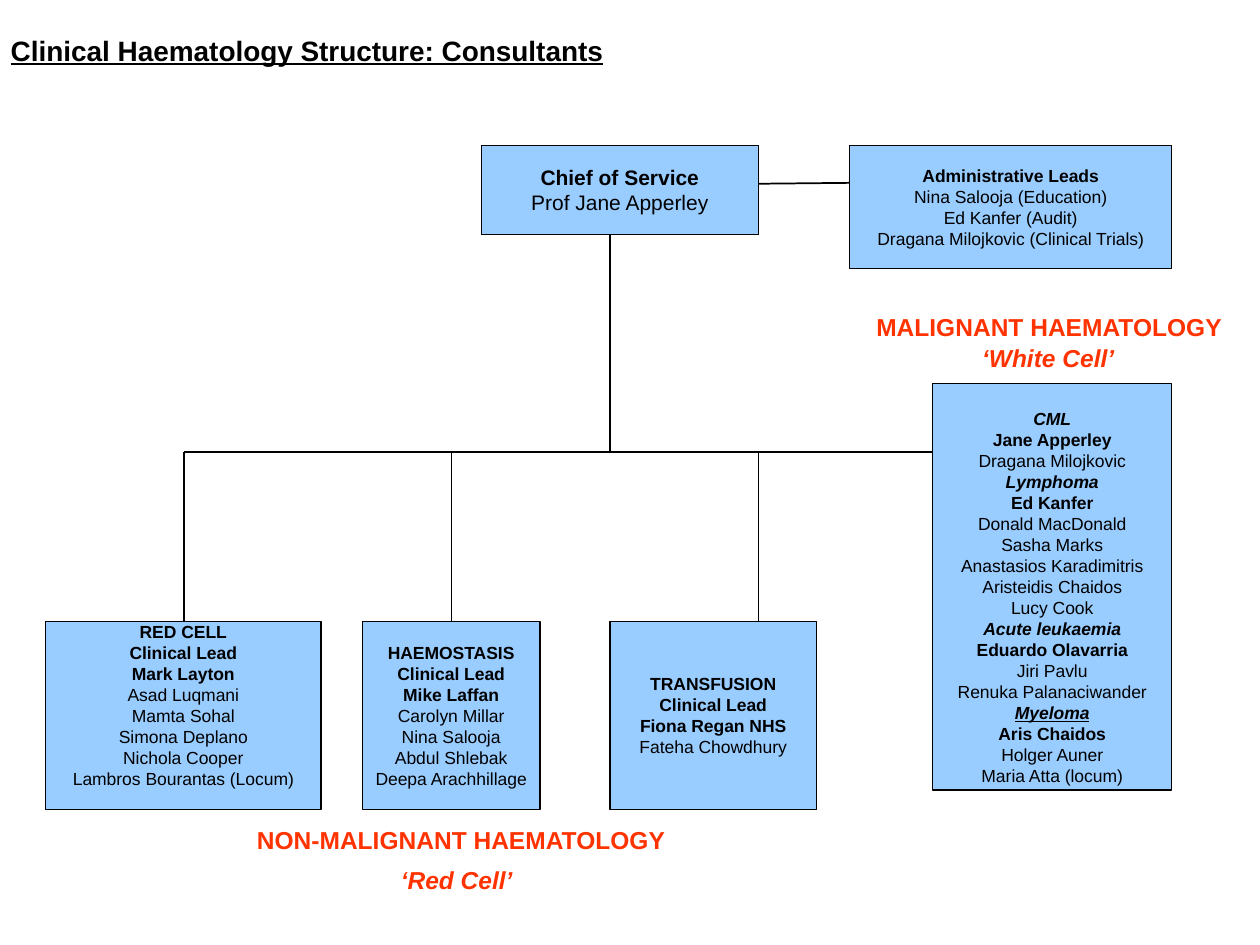
"""Build the organisation chart of the clinical haematology consultants."""
from dataclasses import dataclass

from lxml.etree import SubElement
from pptx import Presentation
from pptx.dml.color import RGBColor as Color
from pptx.enum.shapes import MSO_CONNECTOR as Connector, MSO_SHAPE as Shape
from pptx.enum.text import MSO_ANCHOR as Anchor, MSO_AUTO_SIZE as AutoSize, PP_ALIGN as Align
from pptx.oxml.ns import qn
from pptx.util import Pt


@dataclass(frozen=True)
class Theme:
    font: str = "Arial"
    ink: Color = Color(0x00, 0x00, 0x00)
    accent: Color = Color(0xFF, 0x33, 0x00)
    panel: Color = Color(0x99, 0xCC, 0xFF)
    title_size: int = 16
    label_size: int = 14
    chief_size: int = 12
    team_size: int = 10
    border: float = 0.75
    link: float = 1


THEME = Theme()

CHIEF = [("b", "Chief of Service"), ("", "Prof Jane Apperley")]
ADMIN = [
    ("b", "Administrative Leads"),
    ("", "Nina Salooja (Education)"),
    ("", "Ed Kanfer (Audit)"),
    ("", "Dragana Milojkovic (Clinical Trials)"),
]
RED_CELL = [
    ("b", "RED CELL"),
    ("b", "Clinical Lead"),
    ("b", "Mark Layton"),
    ("", "Asad Luqmani"),
    ("", "Mamta Sohal"),
    ("", "Simona Deplano"),
    ("", "Nichola Cooper"),
    ("", "Lambros Bourantas (Locum)"),
]
HAEMOSTASIS = [
    ("b", "HAEMOSTASIS"),
    ("b", "Clinical Lead"),
    ("b", "Mike Laffan"),
    ("", "Carolyn Millar"),
    ("", "Nina Salooja"),
    ("", "Abdul Shlebak"),
    ("", "Deepa Arachhillage"),
]
TRANSFUSION = [
    ("b", "TRANSFUSION"),
    ("b", "Clinical Lead"),
    ("b", "Fiona Regan NHS"),
    ("", "Fateha Chowdhury"),
]
WHITE_CELL = [
    ("bi", "CML"),
    ("b", "Jane Apperley"),
    ("", "Dragana Milojkovic"),
    ("bi", "Lymphoma"),
    ("b", "Ed Kanfer"),
    ("", "Donald MacDonald"),
    ("", "Sasha Marks"),
    ("", "Anastasios Karadimitris"),
    ("", "Aristeidis Chaidos"),
    ("", "Lucy Cook"),
    ("bi", "Acute leukaemia"),
    ("b", "Eduardo Olavarria"),
    ("", "Jiri Pavlu"),
    ("", "Renuka Palanaciwander"),
    ("biu", "Myeloma"),
    ("b", "Aris Chaidos"),
    ("", "Holger Auner"),
    ("", "Maria Atta (locum)"),
]


def write_lines(frame, lines, size, color=THEME.ink, anchor=Anchor.MIDDLE, inset_top=0):
    """Fill a text frame with centred lines, each styled by the letters b, i and u."""
    frame.word_wrap = True
    frame.auto_size = AutoSize.NONE
    frame.vertical_anchor = anchor
    frame.margin_left = frame.margin_right = frame.margin_bottom = 0
    frame.margin_top = Pt(inset_top)
    for index, (style, text) in enumerate(lines):
        para = frame.paragraphs[0] if index == 0 else frame.add_paragraph()
        para.alignment = Align.CENTER
        para.line_spacing = 1.0
        para.space_before = para.space_after = Pt(0)
        span = para.add_run()
        span.text = text
        span.font.name = THEME.font
        span.font.size = Pt(size)
        span.font.color.rgb = color
        span.font.bold = "b" in style
        span.font.italic = "i" in style
        span.font.underline = "u" in style


def add_title(page, text):
    """Place the underlined heading in the title placeholder."""
    box = page.shapes.title
    box.left, box.top, box.width, box.height = Pt(0), Pt(15), Pt(351), Pt(27)
    write_lines(box.text_frame, [("bu", text)], THEME.title_size)


def add_team(page, bounds, lines, size=THEME.team_size, anchor=Anchor.MIDDLE, inset_top=0):
    """Draw a bordered panel that lists the people of one team."""
    box = page.shapes.add_shape(Shape.RECTANGLE, *map(Pt, bounds))
    box.shadow.inherit = False
    box.fill.solid()
    box.fill.fore_color.rgb = THEME.panel
    box.line.color.rgb = THEME.ink
    box.line.width = Pt(THEME.border)
    write_lines(box.text_frame, lines, size, anchor=anchor, inset_top=inset_top)


def add_link(page, *ends):
    """Draw a plain line between two points."""
    link = page.shapes.add_connector(Connector.STRAIGHT, *map(Pt, ends))
    link.line.color.rgb = THEME.ink
    link.line.width = Pt(THEME.link)
    SubElement(link._element.spPr, qn("a:effectLst"))


def add_label(page, center, top, style, text):
    """Write a coloured group label centred on a given position."""
    width, height = 240, 24
    box = page.shapes.add_textbox(Pt(center - width / 2), Pt(top), Pt(width), Pt(height))
    write_lines(box.text_frame, [(style, text)], THEME.label_size, THEME.accent)


def main():
    """Assemble the slide and save it."""
    deck = Presentation()
    deck.slide_width, deck.slide_height = Pt(720), Pt(540)
    page = deck.slides.add_slide(deck.slide_layouts[5])
    add_title(page, "Clinical Haematology Structure: Consultants")

    trunk, rail, team_top, team_height = 348.5, 258.5, 355, 107.5
    chief_right, chief_bottom = 433.5, 134
    white_left = 533
    add_link(page, chief_right, 105, 485.5, 104.5)
    add_link(page, trunk, chief_bottom, trunk, rail)
    add_link(page, 105, rail, white_left, rail)
    for branch in (105, 258, chief_right):
        add_link(page, branch, rail, branch, team_top)

    add_team(page, (275, 83, 158.5, 51), CHIEF, THEME.chief_size)
    add_team(page, (485.5, 83, 184, 70.5), ADMIN)
    add_team(page, (26, team_top, 157.5, team_height), RED_CELL, anchor=Anchor.TOP)
    add_team(page, (207, team_top, 101.5, team_height), HAEMOSTASIS)
    add_team(page, (trunk, team_top, 118, team_height), TRANSFUSION)
    add_team(page, (white_left, 219, 136.5, 232.5), WHITE_CELL, anchor=Anchor.TOP, inset_top=14)

    add_label(page, 599.5, 174.5, "b", "MALIGNANT HAEMATOLOGY")
    add_label(page, 599, 192.5, "bi", "‘White Cell’")
    add_label(page, 263.5, 468, "b", "NON-MALIGNANT HAEMATOLOGY")
    add_label(page, 261, 490.5, "bi", "‘Red Cell’")
    deck.save("out.pptx")


if __name__ == "__main__":
    main()
